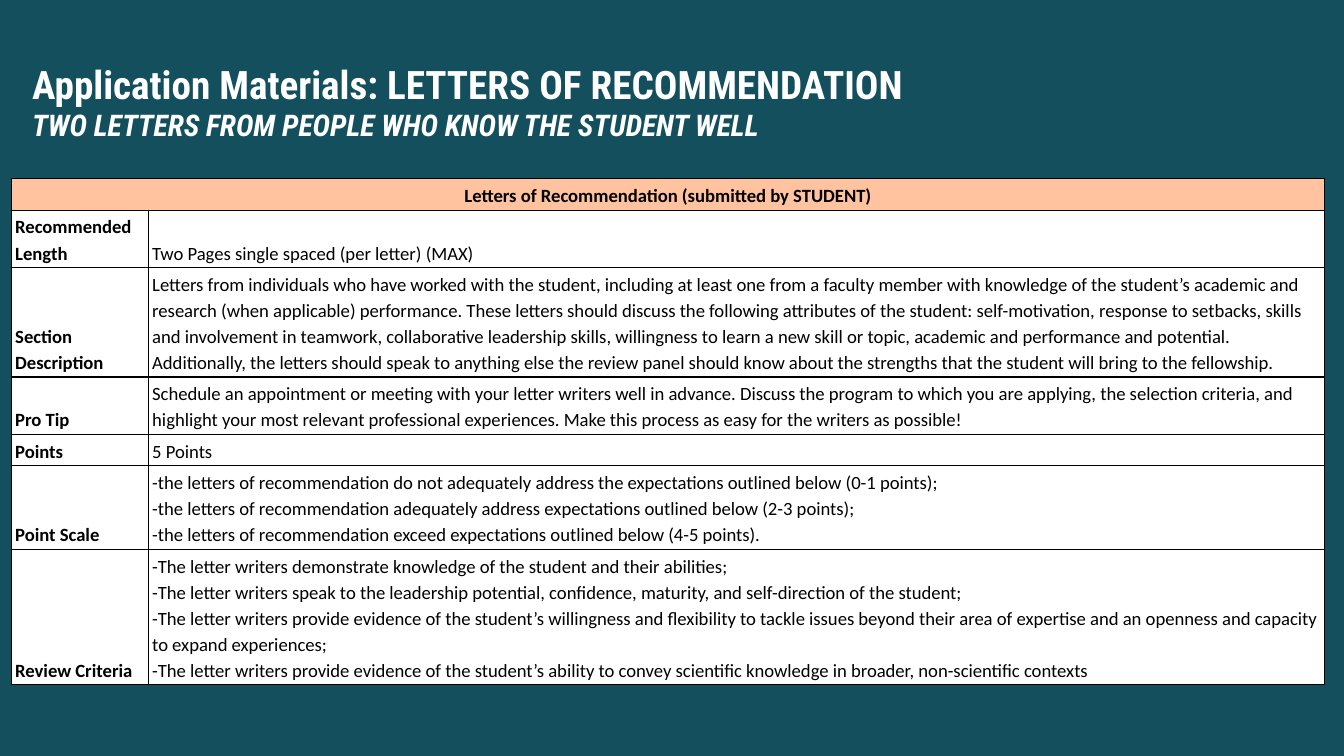
from lxml.etree import SubElement
from pptx import Presentation
from pptx.dml.color import RGBColor as RGB
from pptx.enum.text import MSO_ANCHOR as ANCHOR, MSO_AUTO_SIZE as AUTO_SIZE, PP_ALIGN as ALIGN
from pptx.oxml.ns import qn
from pptx.util import Pt

COLORS = {"page": "134F5C", "title": "FFFFFF", "header": "FFC39F",
          "cell": "FFFFFF", "text": "000000", "border": "000000"}
TITLE_FONT = {"name": "Roboto Condensed", "bold": True}
TABLE_FONT = {"name": "Calibri", "size": Pt(10)}
CELL_FORMAT = {"margin_left": Pt(2.16), "margin_right": Pt(2.16),
               "margin_top": Pt(1.44), "margin_bottom": Pt(1.44),
               "vertical_anchor": ANCHOR.BOTTOM}
TITLE_LINES = [
    ("Application Materials: LETTERS OF RECOMMENDATION", {"size": Pt(21)}),
    ("TWO LETTERS FROM PEOPLE WHO KNOW THE STUDENT WELL", {"size": Pt(16), "italic": True}),
]
HEADER = "Letters of Recommendation (submitted by STUDENT)"
ROWS = [
    ("Recommended Length", ["Two Pages single spaced (per letter) (MAX)"], 29.5),
    ("Section Description", [
        "Letters from individuals who have worked with the student, including at least one from a "
        "faculty member with knowledge of the student’s academic and research (when applicable) "
        "performance. These letters should discuss the following attributes of the student: "
        "self-motivation, response to setbacks, skills and involvement in teamwork, collaborative "
        "leadership skills, willingness to learn a new skill or topic, academic and performance and "
        "potential. Additionally, the letters should speak to anything else the review panel should "
        "know about the strengths that the student will bring to the fellowship."], 54.7),
    ("Pro Tip", [
        "Schedule an appointment or meeting with your letter writers well in advance. Discuss the "
        "program to which you are applying, the selection criteria, and highlight your most relevant "
        "professional experiences. Make this process as easy for the writers as possible!"], 29.5),
    ("Points", ["5 Points"], 16.6),
    ("Point Scale", [
        "-the letters of recommendation do not adequately address the expectations outlined below (0-1 points);",
        "-the letters of recommendation adequately address expectations outlined below (2-3 points);",
        "-the letters of recommendation exceed expectations outlined below (4-5 points)."], 41.8),
    ("Review Criteria", [
        "-The letter writers demonstrate knowledge of the student and their abilities;",
        "-The letter writers speak to the leadership potential, confidence, maturity, and "
        "self-direction of the student;",
        "-The letter writers provide evidence of the student’s willingness and flexibility to tackle "
        "issues beyond their area of expertise and an openness and capacity to expand experiences;",
        "-The letter writers provide evidence of the student’s ability to convey scientific knowledge "
        "in broader, non-scientific contexts"], 67.7),
]


def apply(target, values):
    for name, value in values.items():
        setattr(target, name, value)


class SlideBuilder:
    def __init__(self, deck):
        self.page = deck.slides.add_slide(deck.slide_layouts[5])
        fill = self.page.background.fill
        fill.solid()
        fill.fore_color.rgb = self.color("page")

    def color(self, name):
        return RGB.from_string(COLORS[name])

    def add_span(self, para, text, color, values):
        span = para.add_run()
        span.text = text
        apply(span.font, values)
        span.font.color.rgb = self.color(color)

    def title(self, lines, left, top, width, height):
        box = self.page.shapes.title
        apply(box, {"left": Pt(left), "top": Pt(top), "width": Pt(width), "height": Pt(height)})
        frame = box.text_frame
        apply(frame, {"word_wrap": True, "auto_size": AUTO_SIZE.NONE,
                      "vertical_anchor": ANCHOR.MIDDLE,
                      "margin_left": Pt(7.2), "margin_right": Pt(7.2),
                      "margin_top": Pt(7.2), "margin_bottom": Pt(7.2)})
        for index, (text, values) in enumerate(lines):
            para = frame.add_paragraph() if index else frame.paragraphs[0]
            para.alignment = ALIGN.LEFT
            self.add_span(para, text, "title", TITLE_FONT | values)

    def border(self, cell):
        props = cell._tc.get_or_add_tcPr()
        for index, side in enumerate(("lnL", "lnR", "lnT", "lnB")):
            line = props.makeelement(qn(f"a:{side}"), {"w": str(Pt(0.75))})
            fill = SubElement(line, qn("a:solidFill"))
            SubElement(fill, qn("a:srgbClr"), val=COLORS["border"])
            props.insert(index, line)

    def cell(self, cell, lines, fill="cell", bold=False, align=ALIGN.LEFT):
        apply(cell, CELL_FORMAT)
        cell.fill.solid()
        cell.fill.fore_color.rgb = self.color(fill)
        self.border(cell)
        for index, text in enumerate(lines):
            para = cell.text_frame.add_paragraph() if index else cell.text_frame.paragraphs[0]
            apply(para, {"alignment": align, "line_spacing": 1.15})
            self.add_span(para, text, "text", TABLE_FONT | {"bold": bold})

    def table(self, header, rows, left, top, widths, header_height):
        heights = [header_height] + [height for _, _, height in rows]
        table = self.page.shapes.add_table(
            len(heights), len(widths), Pt(left), Pt(top), Pt(sum(widths)), Pt(sum(heights))).table
        apply(table, {"first_row": False, "horz_banding": False})
        for column, width in zip(table.columns, widths):
            column.width = Pt(width)
        for row, height in zip(table.rows, heights):
            row.height = Pt(height)
        table.cell(0, 0).merge(table.cell(0, 1))
        self.cell(table.cell(0, 0), [header], "header", True, ALIGN.CENTER)
        self.cell(table.cell(0, 1), [], "header")
        for index, (label, lines, _) in enumerate(rows, 1):
            self.cell(table.cell(index, 0), [label], bold=True)
            self.cell(table.cell(index, 1), lines)


def main():
    deck = Presentation()
    apply(deck, {"slide_width": Pt(720), "slide_height": Pt(405)})
    builder = SlideBuilder(deck)
    builder.title(TITLE_LINES, 10, 29.5, 681, 49.7)
    builder.table(HEADER, ROWS, 6, 95.8, [73.4, 630], 16.6)
    deck.save("out.pptx")


if __name__ == "__main__":
    main()
